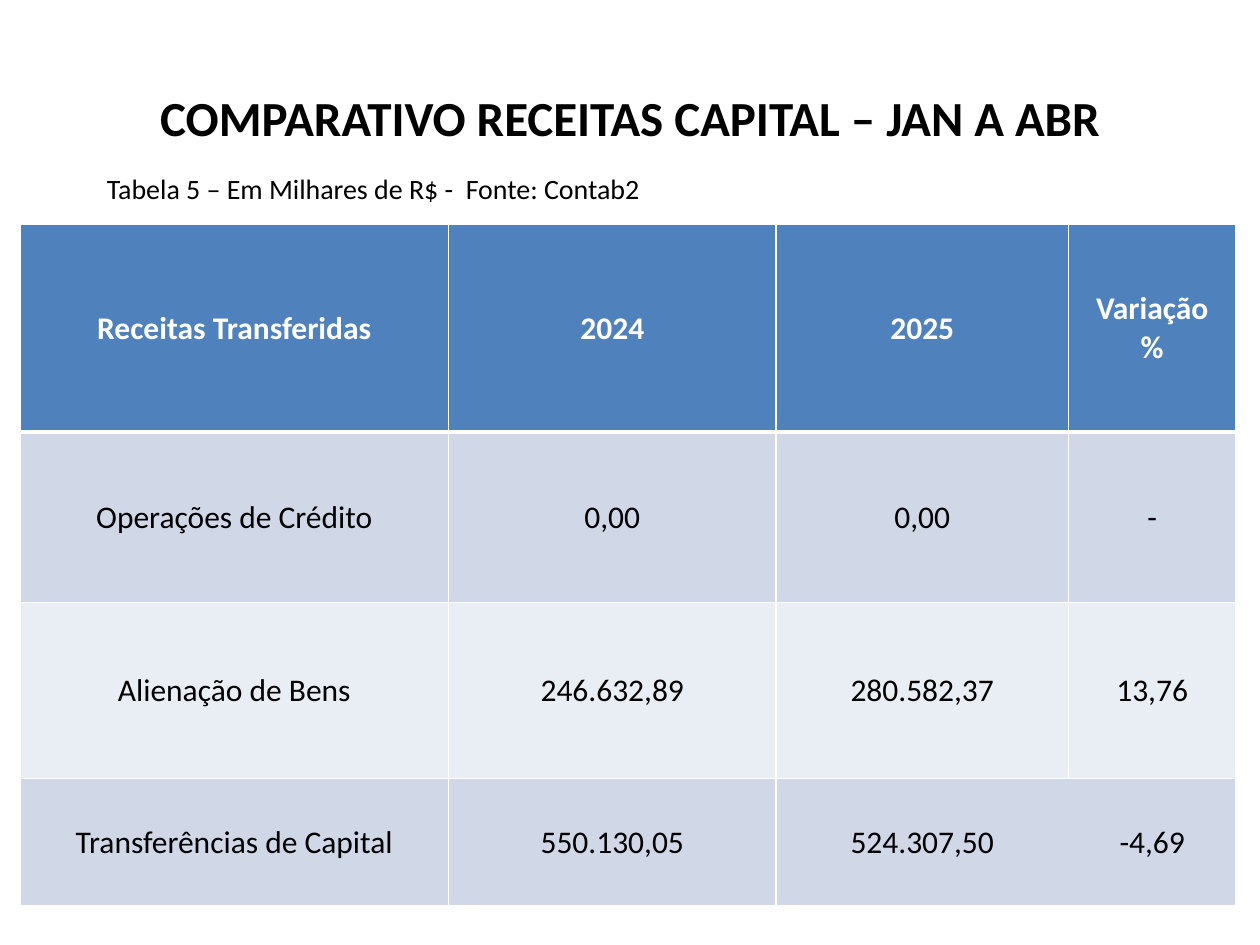
import pptx
import pptx.util
import pptx.dml.color
import pptx.enum.text
import pptx.oxml
import pptx.oxml.ns

Pt = pptx.util.Pt
RGBColor = pptx.dml.color.RGBColor
PP_ALIGN = pptx.enum.text.PP_ALIGN
MSO_ANCHOR = pptx.enum.text.MSO_ANCHOR

BLACK = RGBColor(0x00, 0x00, 0x00)
WHITE = RGBColor(0xFF, 0xFF, 0xFF)
HEADER_BLUE = RGBColor(0x4F, 0x81, 0xBD)
BAND_DARK = RGBColor(0xD0, 0xD8, 0xE8)
BAND_LIGHT = RGBColor(0xE9, 0xED, 0xF4)

FONT = "Calibri"
COLUMN_WIDTHS = [244.8, 187.2, 167.04, 95.76]
ROW_HEIGHTS = [118.8, 97.2, 100.8, 72.72]
REVENUES = [
    ["Receitas Transferidas", "2024", "2025", "Variação %"],
    ["Operações de Crédito", "0,00", "0,00", "-"],
    ["Alienação de Bens", "246.632,89", "280.582,37", "13,76"],
    ["Transferências de Capital", "550.130,05", "524.307,50", "-4,69"],
]


def style_text(paragraph, size, color, bold=False):
    """Format every run of a paragraph."""
    for run in paragraph.runs:
        run.font.name = FONT
        run.font.size = Pt(size)
        run.font.bold = bold
        run.font.color.rgb = color


def add_text(slide, box, text, size, bold=False):
    """Place one line of black text in a box and return its frame."""
    frame = slide.shapes.add_textbox(*map(Pt, box)).text_frame
    frame.word_wrap = True
    frame.text = text
    style_text(frame.paragraphs[0], size, BLACK, bold)
    return frame


def add_title(slide, box):
    """Place the centred title."""
    title = add_text(slide, box, "COMPARATIVO RECEITAS CAPITAL – JAN A ABR", 28, True)
    title.vertical_anchor = MSO_ANCHOR.MIDDLE
    title.paragraphs[0].alignment = PP_ALIGN.CENTER


def add_caption(slide, box):
    """Place the table caption with its hanging indent."""
    caption = add_text(slide, box, "Tabela 5 – Em Milhares de R$ -  Fonte: Contab2", 16)
    paragraph = caption.paragraphs[0]
    paragraph.space_before = Pt(3.2)
    properties = paragraph._p.get_or_add_pPr()
    properties.set("marL", str(Pt(27)))
    properties.set("indent", str(-Pt(27)))


def set_borders(cell, widths):
    """Draw white cell borders from a mapping of side to width."""
    properties = cell._tc.get_or_add_tcPr()
    for position, side in enumerate("LRTB"):
        width = widths[side]
        paint = f'<a:solidFill><a:srgbClr val="{WHITE}"/></a:solidFill>' if width else "<a:noFill/>"
        properties.insert(position, pptx.oxml.parse_xml(
            f'<a:ln{side} {pptx.oxml.ns.nsdecls("a")} w="{Pt(width)}">{paint}</a:ln{side}>'))


def add_revenue_table(slide, box):
    """Place the revenue table with a blue header and banded rows."""
    table = slide.shapes.add_table(len(REVENUES), len(REVENUES[0]), *map(Pt, box)).table
    for column, width in zip(table.columns, COLUMN_WIDTHS):
        column.width = Pt(width)
    last_row = len(REVENUES) - 1
    for r, values in enumerate(REVENUES):
        table.rows[r].height = Pt(ROW_HEIGHTS[r])
        header = r == 0
        fill = HEADER_BLUE if header else BAND_DARK if r % 2 else BAND_LIGHT
        for c, value in enumerate(values):
            cell = table.cell(r, c)
            cell.text = value
            cell.vertical_anchor = MSO_ANCHOR.MIDDLE
            cell.fill.solid()
            cell.fill.fore_color.rgb = fill
            paragraph = cell.text_frame.paragraphs[0]
            paragraph.alignment = PP_ALIGN.CENTER
            style_text(paragraph, 18, WHITE if header else BLACK, header)
            set_borders(cell, {
                "L": 0 if (r, c) == (last_row, 3) else 1,
                "R": 0 if (r, c) == (last_row, 2) else 1,
                "T": 3 if r == 1 else 1,
                "B": 3 if header else 1,
            })


def main():
    """Build the slide and save it."""
    presentation = pptx.Presentation()
    presentation.slide_width = Pt(720)
    presentation.slide_height = Pt(540)
    slide = presentation.slides.add_slide(presentation.slide_layouts[6])
    add_title(slide, (36, 21.6, 648, 90))
    add_caption(slide, (54, 94.32, 648, 33.84))
    add_revenue_table(slide, (11.52, 128.16, sum(COLUMN_WIDTHS), sum(ROW_HEIGHTS)))
    presentation.save("out.pptx")


if __name__ == "__main__":
    main()
